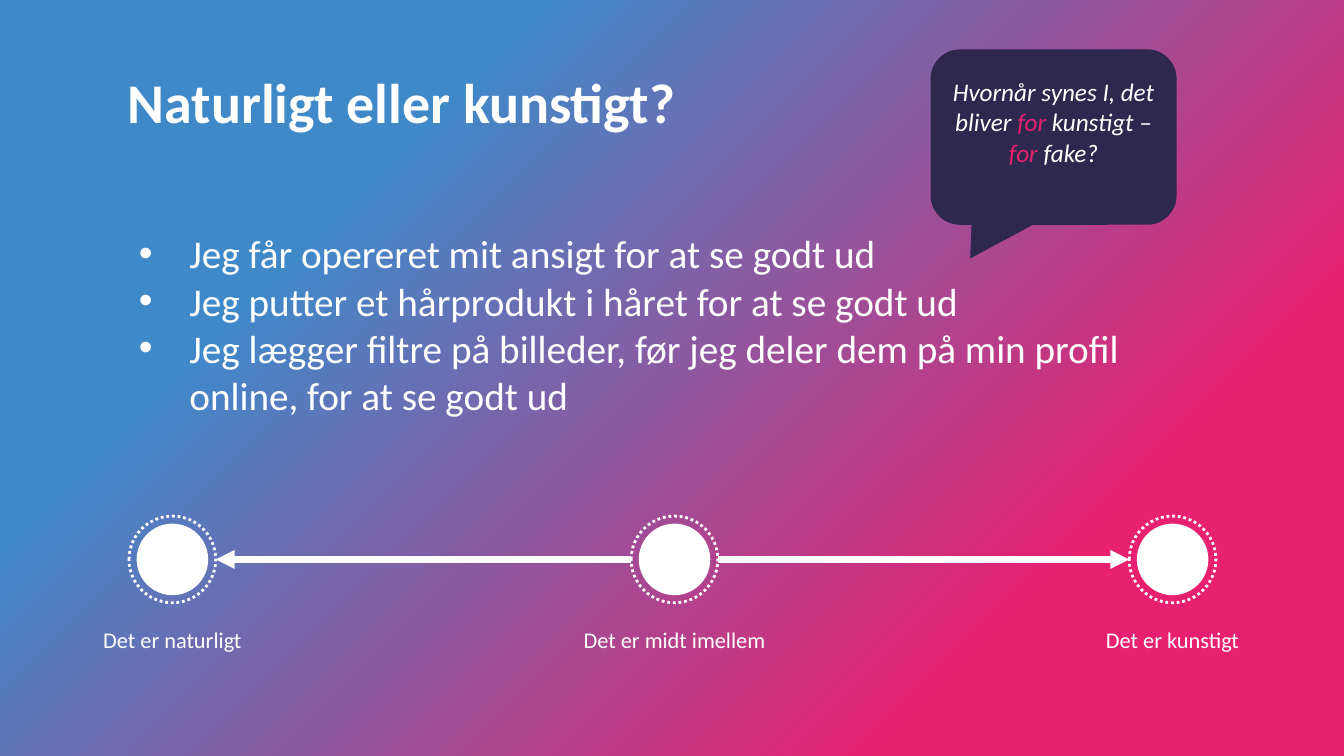
import pptx
import pptx.util
import pptx.dml.color
import pptx.enum.dml
import pptx.enum.shapes
import pptx.enum.text
import pptx.oxml
import pptx.oxml.ns
import lxml.etree

Inches = pptx.util.Inches
Pt = pptx.util.Pt
Shape = pptx.enum.shapes.MSO_SHAPE
Anchor = pptx.enum.text.MSO_ANCHOR
Align = pptx.enum.text.PP_ALIGN
COLOURS = {"blue": "4089C9", "pink": "E72070", "white": "FFFFFF", "navy": "2F284E"}
STATEMENTS = [
    "Jeg får opereret mit ansigt for at se godt ud",
    "Jeg putter et hårprodukt i håret for at se godt ud",
    "Jeg lægger filtre på billeder, før jeg deler dem\u00a0på min profil online, for at se godt ud",
]
QUESTION = [
    ("Hvornår synes I, det bliver ", "white"),
    ("for", "pink"),
    (" kunstigt – ", "white"),
    ("for", "pink"),
    (" fake?", "white"),
]
SCALE = [(1.71, "Det er naturligt"), (6.69, "Det er midt imellem"), (11.63, "Det er kunstigt")]


def colour(name):
    """Return a named colour as RGB."""
    return pptx.dml.color.RGBColor.from_string(COLOURS[name])


def add_xml(parent, tag, **attributes):
    """Append a drawing element to the parent and return it."""
    return lxml.etree.SubElement(parent, pptx.oxml.ns.qn(tag), **attributes)


def style_font(font, size, bold=None, italic=None):
    """Give a font the type face of the slide, in white."""
    font.name, font.size = "Calibri", Pt(size)
    font.bold, font.italic = bold, italic
    font.color.rgb = colour("white")


def add_text(page, box, text, size, bold=None, align=None, spacing=None, anchor=Anchor.TOP):
    """Add a wrapping text box with one paragraph."""
    frame = page.shapes.add_textbox(*map(Inches, box)).text_frame
    frame.word_wrap = True
    frame.vertical_anchor = anchor
    para = frame.paragraphs[0]
    para.text, para.alignment, para.line_spacing = text, align, spacing
    style_font(para.font, size, bold)


def add_background(page):
    """Fill the page with the diagonal gradient."""
    fill = page.background.fill
    fill.gradient()
    fill.gradient_angle = 315
    for stop, (position, name) in zip(fill.gradient_stops, [(0.26, "blue"), (0.78, "pink")]):
        stop.position = position
        stop.color.rgb = colour(name)


def add_statements(page, box):
    """List the statements as bullets."""
    frame = page.shapes.add_textbox(*map(Inches, box)).text_frame
    frame.word_wrap = True
    for number, statement in enumerate(STATEMENTS):
        para = frame.add_paragraph() if number else frame.paragraphs[0]
        para.text = statement
        properties = para._p.get_or_add_pPr()
        properties.set("marL", str(Inches(0.5)))
        properties.set("indent", str(Inches(-0.5)))
        add_xml(properties, "a:buFont", typeface="Arial")
        add_xml(properties, "a:buChar", char="•")
        style_font(para.font, 28)


def add_question(page, box):
    """Draw the speech bubble with its question."""
    bubble = page.shapes.add_shape(Shape.ROUNDED_RECTANGULAR_CALLOUT, *map(Inches, box))
    bubble.shadow.inherit = False
    for index, value in enumerate([-0.339, 0.692, 0.167]):
        bubble.adjustments[index] = value
    bubble.fill.solid()
    bubble.fill.fore_color.rgb = colour("navy")
    bubble.line.fill.background()
    frame = bubble.text_frame
    frame.word_wrap = True
    frame.vertical_anchor = Anchor.MIDDLE
    frame.margin_bottom = Inches(0.35)
    para = frame.paragraphs[0]
    para.alignment = Align.CENTER
    for text, name in QUESTION:
        span = para.add_run()
        span.text = text
        style_font(span.font, 18, italic=True)
        span.font.color.rgb = colour(name)


def add_circle(page, centre, middle, size):
    """Add an oval around a centre point."""
    circle = page.shapes.add_shape(
        Shape.OVAL, Inches(centre - size / 2), Inches(middle - size / 2), Inches(size), Inches(size))
    circle.shadow.inherit = False
    return circle


def add_arrow(page, start, end, middle):
    """Add a level arrow from start to end."""
    arrow = page.shapes.add_connector(
        pptx.enum.shapes.MSO_CONNECTOR.STRAIGHT, Inches(start), Inches(middle), Inches(end), Inches(middle))
    arrow.line.color.rgb = colour("white")
    arrow.line.width = Pt(4.5)
    add_xml(arrow.line._get_or_add_ln(), "a:tailEnd", type="triangle")
    add_xml(arrow._element.spPr, "a:effectLst")


def add_scale(page, box):
    """Draw the scale of three labelled points joined by arrows."""
    left, top, width, height = box
    ring_size, dot_size, label_width = 0.86, 0.71, 3.14
    middle = top + ring_size / 2
    centres = [centre for centre, label in SCALE]
    radius = ring_size / 2
    add_arrow(page, centres[1] - radius, centres[0] + radius, middle)
    add_arrow(page, centres[1] + radius, centres[2] - radius, middle)
    for centre, label in SCALE:
        ring = add_circle(page, centre, middle, ring_size)
        ring.fill.background()
        ring.line.color.rgb = colour("white")
        ring.line.width = Pt(2)
        ring.line.dash_style = pptx.enum.dml.MSO_LINE.ROUND_DOT
        dot = add_circle(page, centre, middle, dot_size)
        dot.fill.solid()
        dot.fill.fore_color.rgb = colour("white")
        dot.line.fill.background()
        label_box = (centre - label_width / 2, top + height - 0.33, label_width, 0.33)
        add_text(page, label_box, label, 16, align=Align.CENTER, spacing=0.9)


def main():
    """Build the slide and save it."""
    deck = pptx.Presentation()
    deck.slide_width, deck.slide_height = Inches(13.33), Inches(7.5)
    page = deck.slides.add_slide(deck.slide_layouts[6])
    add_background(page)
    add_text(page, (1.17, 0.61, 11.05, 0.78), "Naturligt eller kunstigt?", 40,
             bold=True, spacing=0.9, anchor=Anchor.BOTTOM)
    add_statements(page, (1.28, 2.23, 10.78, 1.99))
    add_question(page, (9.23, 0.49, 2.44, 1.74))
    add_scale(page, (1.28, 5.12, 10.78, 1.4))
    deck.save("out.pptx")


if __name__ == "__main__":
    main()
